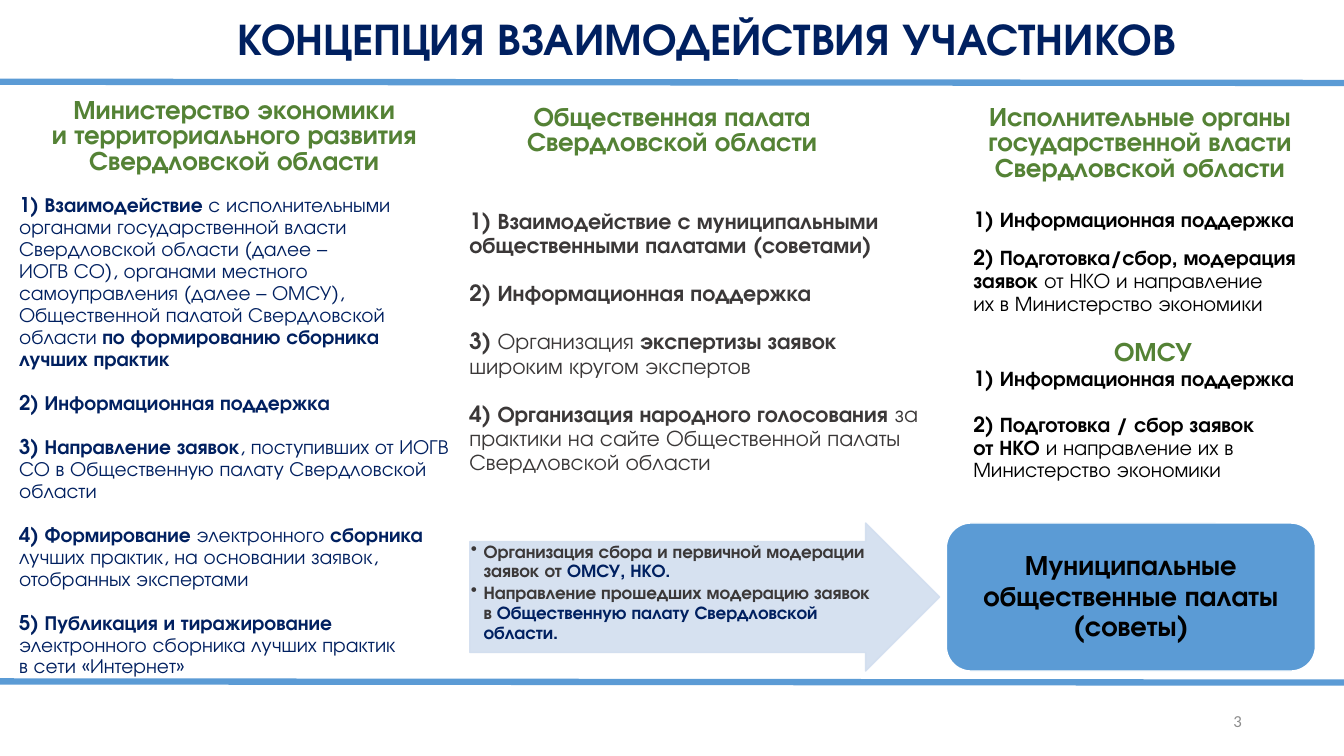
"""Builds the slide on how the participants of the best-practice collection interact."""
import pptx
import pptx.dml.color
import pptx.enum.shapes
import pptx.enum.text
import pptx.oxml
import pptx.oxml.ns
import pptx.util
from pptx.util import Cm

RGBColor = pptx.dml.color.RGBColor
NAVY = RGBColor(0x00, 0x20, 0x60)
GREEN = RGBColor(0x54, 0x82, 0x35)
CHARCOAL = RGBColor(0x3B, 0x38, 0x38)
BLACK = RGBColor(0x00, 0x00, 0x00)
GRAY = RGBColor(0x8C, 0x8C, 0x8C)
BLUE = RGBColor(0x5B, 0x9B, 0xD5)
PALE_BLUE = RGBColor(0xD2, 0xDE, 0xEF)
WHITE = RGBColor(0xFF, 0xFF, 0xFF)

ALIGN = pptx.enum.text.PP_ALIGN
ANCHOR = pptx.enum.text.MSO_ANCHOR
SHAPE = pptx.enum.shapes.MSO_SHAPE

MINISTRY_TASKS = [
    "**1) Взаимодействие **с исполнительными органами государственной власти "
    "Свердловской области (далее –\vИОГВ СО), органами местного самоуправления "
    "(далее – ОМСУ), Общественной палатой Свердловской области "
    "**по формированию сборника лучших практик**",
    "**2) Информационная поддержка**",
    "**3) Направление заявок**, поступивших от ИОГВ СО в Общественную палату "
    "Свердловской области",
    "**4) Формирование **электронного** сборника **лучших практик, на основании "
    "заявок, отобранных экспертами",
    "**5) Публикация и тиражирование **электронного сборника лучших практик\v"
    "в сети «Интернет»",
]
CHAMBER_TASKS = [
    "**1) Взаимодействие с муниципальными общественными палатами (советами)**",
    "**2) Информационная поддержка**",
    "**3) **Организация** экспертизы заявок**\vшироким кругом экспертов",
    "**4) Организация народного голосования **за практики на сайте "
    "Общественной палаты Свердловской области",
]
EXECUTIVE_TASKS = [
    "**1) Информационная поддержка**",
    "**2) Подготовка/сбор, модерация заявок **от НКО и направление\v"
    "их в Министерство экономики",
]
MUNICIPAL_TASKS = [
    "**1) Информационная поддержка**",
    "**2) Подготовка / сбор заявок\vот НКО **и направление их в "
    "Министерство экономики",
]
COUNCIL_TASKS = [
    "**Организация сбора и первичной модерации заявок от **ОМСУ, НКО.",
    "**Направление прошедших модерацию заявок в **Общественную палату "
    "Свердловской области.",
]


class SlideBuilder:
    """Holds the text style and the current slide."""

    def __init__(self, slide, font="TeX Gyre Adventor"):
        self.slide = slide
        self.font = font

    def style(self, run, size, color, bold, font=None):
        """Formats one run."""
        run.font.name = font or self.font
        run.font.size = pptx.util.Pt(size)
        run.font.bold = bold
        run.font.color.rgb = color

    def frame(self, place, anchor=ANCHOR.TOP):
        """Adds a wrapping text box and returns its text frame."""
        frame = self.slide.shapes.add_textbox(*map(Cm, place)).text_frame
        frame.word_wrap = True
        frame.vertical_anchor = anchor
        return frame

    def label(self, frame, text, size, color, spacing=0.9, align=ALIGN.CENTER,
              bold=True, font=None):
        """Writes one paragraph in a single style."""
        frame.text = text
        paragraph = frame.paragraphs[0]
        paragraph.alignment = align
        paragraph.line_spacing = spacing
        for run in paragraph.runs:
            self.style(run, size, color, bold, font)
        self.size_breaks(paragraph, size)

    def heading(self, place, text):
        """Adds a green column heading."""
        self.label(self.frame(place), text, 19, GREEN, spacing=0.8)

    def size_breaks(self, paragraph, size):
        """Gives line breaks the size of the text around them."""
        for line_break in paragraph._p.findall(pptx.oxml.ns.qn("a:br")):
            properties = pptx.oxml.parse_xml(
                f'<a:rPr {pptx.oxml.ns.nsdecls("a")} sz="{int(size * 100)}"/>')
            line_break.append(properties)

    def tasks(self, place, items, size, color, gap, plain=None, bulleted=False):
        """Adds a list whose ** parts are bold; plain recolours the other parts."""
        frame = self.frame(place)
        for number, item in enumerate(items):
            paragraph = frame.add_paragraph() if number else frame.paragraphs[0]
            if bulleted:
                self.bullet(paragraph)
            paragraph.line_spacing = 0.9
            if number:
                paragraph.space_before = pptx.util.Pt(gap)
            for index, part in enumerate(item.split("**")):
                strong = index % 2 == 1
                for row, words in enumerate(part.split("\v")):
                    if row:
                        paragraph.add_line_break()
                    if words:
                        run = paragraph.add_run()
                        run.text = words
                        self.style(run, size, color if strong else plain or color,
                                   strong or plain is not None)
            self.size_breaks(paragraph, size)
        return frame

    def bullet(self, paragraph):
        """Turns a paragraph into a hanging bullet."""
        properties = paragraph._p.get_or_add_pPr()
        properties.set("marL", str(Cm(0.32)))
        properties.set("indent", str(-Cm(0.32)))
        properties.append(pptx.oxml.parse_xml(
            f'<a:buChar {pptx.oxml.ns.nsdecls("a")} char="•"/>'))

    def rule(self, top):
        """Adds a line across the whole slide."""
        line = self.slide.shapes.add_connector(
            pptx.enum.shapes.MSO_CONNECTOR.STRAIGHT,
            Cm(0), Cm(top), Cm(33.87), Cm(top + 0.03))
        line.line.color.rgb = BLUE
        line.line.width = pptx.util.Pt(4.5)
        line._element.spPr.append(pptx.oxml.parse_xml(
            f'<a:effectLst {pptx.oxml.ns.nsdecls("a")}/>'))

    def block(self, kind, place, fill, outline, opacity=100):
        """Adds a filled preset shape."""
        shape = self.slide.shapes.add_shape(kind, *map(Cm, place))
        shape.shadow.inherit = False
        shape.fill.solid()
        shape.fill.fore_color.rgb = fill
        shape.line.color.rgb = outline
        shape.line.width = pptx.util.Pt(1)
        if opacity < 100:
            for color in shape._element.spPr.iter(pptx.oxml.ns.qn("a:srgbClr")):
                color.append(pptx.oxml.parse_xml(
                    f'<a:alpha {pptx.oxml.ns.nsdecls("a")} val="{opacity * 1000}"/>'))
        return shape


def main():
    """Builds and saves the slide."""
    deck = pptx.Presentation()
    deck.slide_width, deck.slide_height = Cm(33.87), Cm(19.05)
    page = SlideBuilder(deck.slides.add_slide(deck.slide_layouts[6]))

    for top in (2.06, 17.17):
        page.rule(top)
    page.label(page.frame((4.27, 0.13, 27.1, 1.65), ANCHOR.BOTTOM),
               "КОНЦЕПЦИЯ ВЗАИМОДЕЙСТВИЯ УЧАСТНИКОВ", 32, NAVY)
    page.label(page.frame((23.93, 17.65, 7.62, 1.02), ANCHOR.MIDDLE), "3", 12, GRAY,
               spacing=1.0, align=ALIGN.RIGHT, bold=False, font="Calibri")

    page.heading((0, 2.36, 11.81, 2.21),
                 "Министерство экономики\vи территориального развития "
                 "Свердловской области")
    page.tasks((0.23, 4.8, 11.36, 12.4), MINISTRY_TASKS, 14.5, NAVY, 15.7)

    page.heading((11.58, 2.54, 10.72, 1.55), "Общественная палата Свердловской области")
    page.tasks((11.58, 5.16, 11.84, 7.4), CHAMBER_TASKS, 16, CHARCOAL, 17.3)

    page.heading((23.6, 2.54, 10.26, 2.21),
                 "Исполнительные органы государственной власти Свердловской области")
    page.tasks((24.28, 5.16, 9.55, 3.1), EXECUTIVE_TASKS, 15, BLACK, 10.8)
    page.heading((25.76, 8.46, 6.6, 0.91), "ОМСУ")
    page.tasks((24.28, 9.17, 9.55, 3.2), MUNICIPAL_TASKS, 15, BLACK, 16.2)

    arrow = page.block(SHAPE.RIGHT_ARROW, (11.84, 13.18, 11.84, 3.73),
                       PALE_BLUE, PALE_BLUE, opacity=90)
    arrow.adjustments[0] = 0.75
    arrow.adjustments[1] = 0.5
    council_tasks = page.tasks((11.84, 13.64, 10.44, 2.79), COUNCIL_TASKS, 13, CHARCOAL,
                               1.5, plain=NAVY, bulleted=True)
    council_tasks.margin_left = council_tasks.margin_right = Cm(0.03)
    council_tasks.margin_top = council_tasks.margin_bottom = Cm(0.03)

    councils = page.block(SHAPE.ROUNDED_RECTANGLE, (23.85, 13.18, 9.3, 3.73), BLUE, WHITE)
    councils.text_frame.word_wrap = True
    councils.text_frame.vertical_anchor = ANCHOR.MIDDLE
    page.label(councils.text_frame, "Муниципальные общественные палаты (советы)",
               20, BLACK)

    deck.save("out.pptx")


if __name__ == "__main__":
    main()
